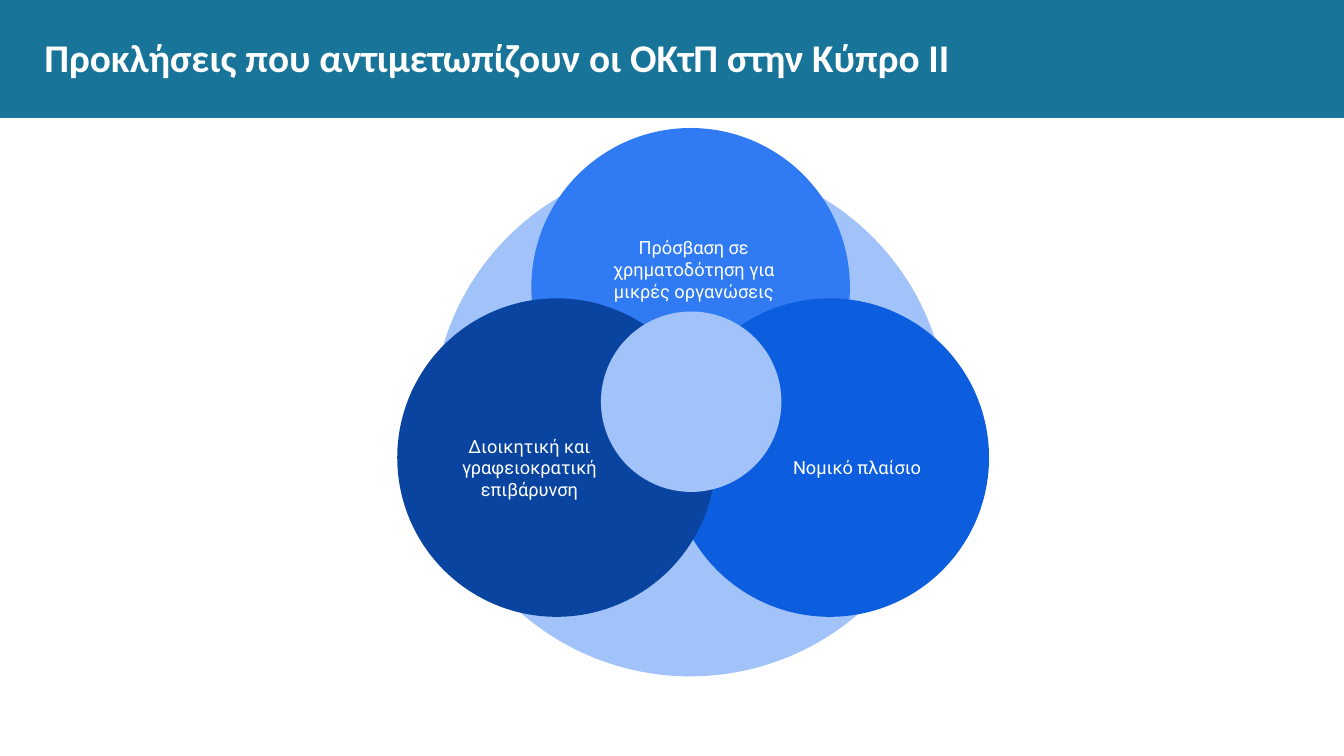
"""Build a slide showing three overlapping challenges around a central circle."""
from dataclasses import dataclass

from pptx import Presentation
from pptx.dml.color import RGBColor
from pptx.enum.shapes import MSO_SHAPE
from pptx.enum.text import MSO_ANCHOR, MSO_AUTO_SIZE, PP_ALIGN
from pptx.util import Pt

EMU_PER_PX = 9144


@dataclass(frozen=True)
class Theme:
    band: str = "187498"
    pale: str = "A1C3FA"
    bright: str = "307BF3"
    medium: str = "0D5DDF"
    dark: str = "0944A1"
    text: str = "FFFFFF"
    title_font: str = "Calibri"
    label_font: str = "Roboto"
    title_size: int = 28
    label_size: int = 13


class SlideBuilder:
    def __init__(self, slide, theme):
        self.slide = slide
        self.theme = theme

    def box(self, *lengths):
        return [length * EMU_PER_PX for length in lengths]

    def shape(self, kind, left, top, width, height, color):
        shape = self.slide.shapes.add_shape(kind, *self.box(left, top, width, height))
        shape.shadow.inherit = False
        shape.fill.solid()
        shape.fill.fore_color.rgb = RGBColor.from_string(color)
        shape.line.fill.background()
        return shape

    def circle(self, left, top, diameter, color):
        return self.shape(MSO_SHAPE.OVAL, left, top, diameter, diameter, color)

    def set_text(self, shape, text, font, size, bold, alignment, margin):
        frame = shape.text_frame
        frame.word_wrap = True
        frame.auto_size = MSO_AUTO_SIZE.NONE
        frame.vertical_anchor = MSO_ANCHOR.MIDDLE
        inset = margin * EMU_PER_PX
        frame.margin_left = frame.margin_right = inset
        frame.margin_top = frame.margin_bottom = inset
        paragraph = frame.paragraphs[0]
        paragraph.alignment = alignment
        run = paragraph.add_run()
        run.text = text
        run.font.name = font
        run.font.size = Pt(size)
        run.font.bold = bold
        run.font.color.rgb = RGBColor.from_string(self.theme.text)

    def title(self, text, left, top, width, height):
        title = self.slide.shapes.title
        title.left, title.top, title.width, title.height = self.box(left, top, width, height)
        self.set_text(title, text, self.theme.title_font, self.theme.title_size,
                      True, PP_ALIGN.LEFT, 0)

    def title_band(self, width, height):
        band = self.shape(MSO_SHAPE.RECTANGLE, 0, 0, width, height, self.theme.band)
        self.slide.shapes.title.element.addprevious(band.element)

    def label(self, text, left, top, width, height):
        label = self.slide.shapes.add_textbox(*self.box(left, top, width, height))
        self.set_text(label, text, self.theme.label_font, self.theme.label_size,
                      False, PP_ALIGN.CENTER, 13)


def main():
    theme = Theme()
    presentation = Presentation()
    presentation.slide_width = 1333 * EMU_PER_PX
    presentation.slide_height = 750 * EMU_PER_PX
    slide = presentation.slides.add_slide(presentation.slide_layouts[5])
    builder = SlideBuilder(slide, theme)

    builder.title_band(1333, 117)
    builder.title("Προκλήσεις που αντιμετωπίζουν οι ΟΚτΠ στην Κύπρο II", 44, 19, 1246, 74)

    builder.circle(429, 160, 511, theme.pale)
    challenges = [
        ("Πρόσβαση σε χρηματοδότηση για μικρές οργανώσεις", theme.bright, (527, 127), (579, 216)),
        ("Νομικό πλαίσιο", theme.medium, (665, 296), (741, 413)),
        ("Διοικητική και γραφειοκρατική επιβάρυνση", theme.dark, (394, 296), (416, 413)),
    ]
    for text, color, circle_corner, label_corner in challenges:
        builder.circle(*circle_corner, 316, color)
        builder.label(text, *label_corner, 218, 102)
    builder.circle(596, 309, 179, theme.pale)

    presentation.save("out.pptx")


if __name__ == "__main__":
    main()
